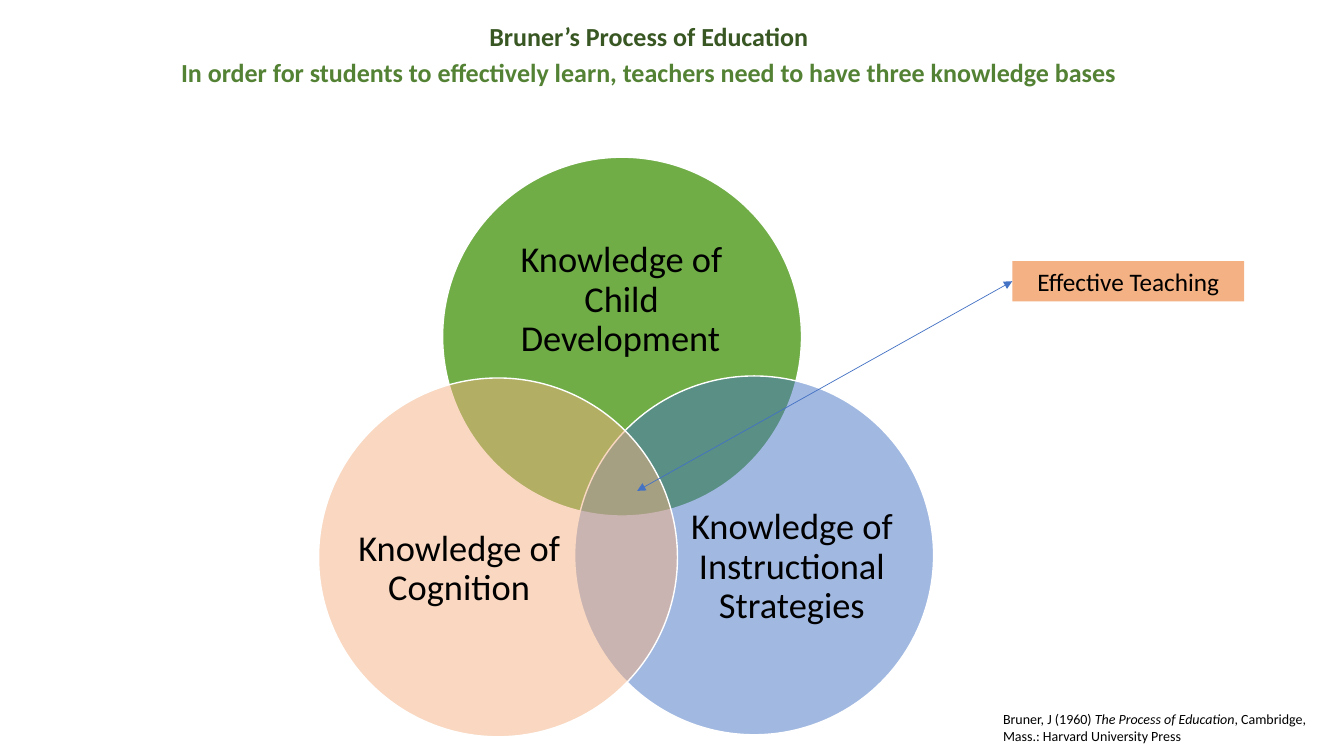
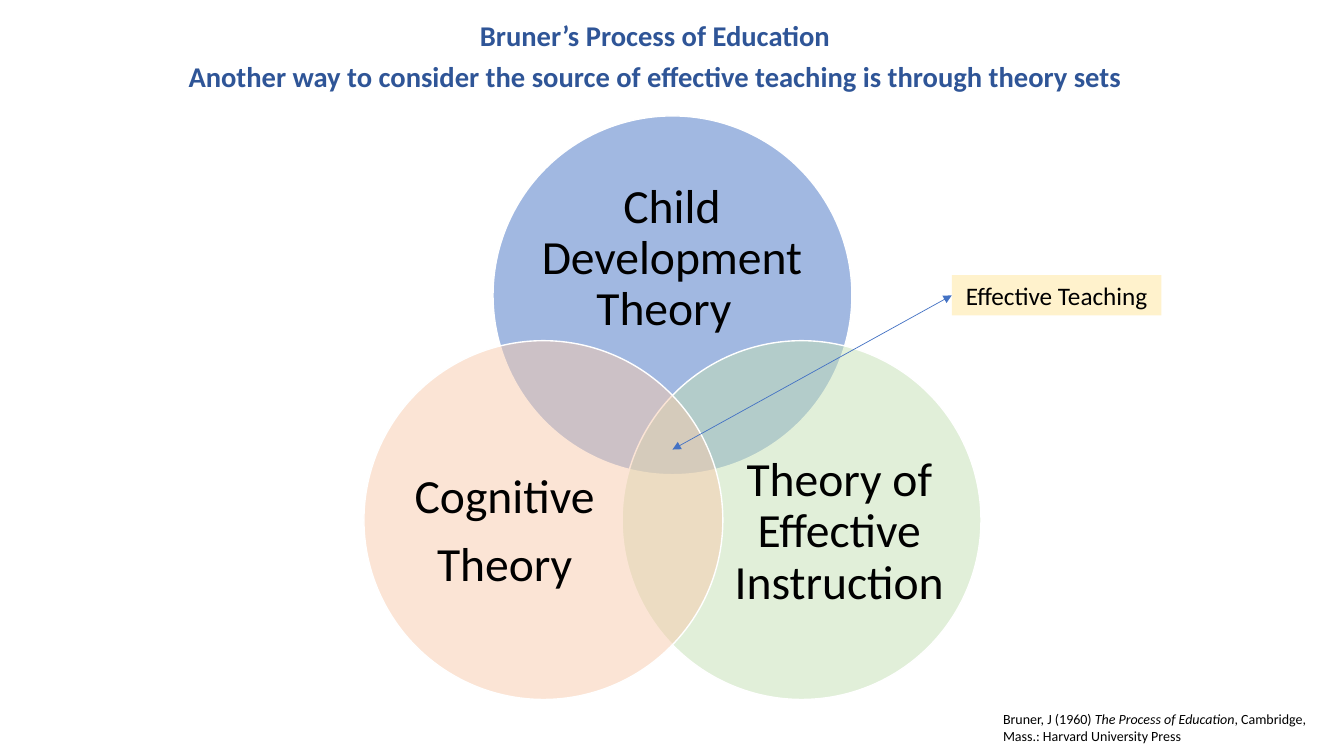
import pptx
import pptx.util
import pptx.dml.color
import pptx.enum.shapes
import pptx.enum.text
import pptx.oxml
import pptx.oxml.ns
import lxml.etree

Inches = pptx.util.Inches
Pt = pptx.util.Pt
qn = pptx.oxml.ns.qn
RGBColor = pptx.dml.color.RGBColor
MSO_SHAPE = pptx.enum.shapes.MSO_SHAPE
PP_ALIGN = pptx.enum.text.PP_ALIGN
MSO_ANCHOR = pptx.enum.text.MSO_ANCHOR

THEME = {
    "font": "Calibri",
    "text": "000000",
    "outline": "FFFFFF",
    "arrow": "4472C4",
    "label_size": 18,
    "citation_size": 10,
}

DIAMETER = 3.56
CIRCLE_LABELS = [
    (0.47, 0.62, 2.61, 1.6),
    (1.09, 0.92, 2.13, 1.96),
    (0.33, 0.92, 2.13, 1.96),
]
CITATION = [
    ("Bruner, J (1960) ", False),
    ("The Process of Education", True),
    (", Cambridge, Mass.: Harvard University Press", False),
]

SLIDES = [
    {
        "title_box": (1.54, 0.24, 9.79, 0.92),
        "title_size": 18.6,
        "title_spacing": 0.7,
        "title": [
            ("Bruner’s Process of Education", "385723"),
            ("In order for students to effectively learn, teachers need to have three knowledge bases", "548235"),
        ],
        "circle_size": 26,
        "circles": [
            (4.39, 1.56, "70AD47", 100, ["Knowledge of Child Development\t"]),
            (5.7, 3.73, "4472C4", 50, ["Knowledge of Instructional Strategies"]),
            (3.16, 3.75, "F4B183", 50, ["Knowledge of Cognition"]),
        ],
        "arrow_start": (6.32, 4.87),
        "label_box": (10.04, 2.59, 2.3, 0.4),
        "label_fill": "F4B183",
    },
    {
        "title_box": (1.6, 0.19, 9.79, 0.82),
        "title_size": 20.4,
        "title_spacing": 0.8,
        "title": [
            ("Bruner’s Process of Education", "2F5597"),
            ("Another way to consider the source of effective teaching is through theory sets", "2F5597"),
        ],
        "circle_size": 34,
        "circles": [
            (4.89, 1.15, "4472C4", 50, ["Child Development Theory\t"]),
            (6.17, 3.38, "C5E0B4", 50, ["Theory of Effective Instruction"]),
            (3.61, 3.38, "F8CBAD", 50, ["Cognitive", "Theory"]),
        ],
        "arrow_start": (6.67, 4.46),
        "label_box": (9.44, 2.73, 2.08, 0.4),
        "label_fill": "FFF2CC",
    },
]


def write(shape, paragraphs, size, align=PP_ALIGN.CENTER, spacing=1.0, gap=0, bold=False):
    frame = shape.text_frame
    frame.word_wrap = True
    for index, runs in enumerate(paragraphs):
        paragraph = frame.add_paragraph() if index else frame.paragraphs[0]
        paragraph.alignment = align
        paragraph.line_spacing = spacing
        if index:
            paragraph.space_before = Pt(gap)
        for text, color, italic in runs:
            run = paragraph.add_run()
            run.text = text
            run.font.name = THEME["font"]
            run.font.size = Pt(size)
            run.font.bold = bold
            run.font.italic = italic
            run.font.color.rgb = RGBColor.from_string(color)
    return frame


def add_filled(slide, kind, box, color, opacity=100):
    shape = slide.shapes.add_shape(kind, *map(Inches, box))
    shape.shadow.inherit = False
    shape.fill.solid()
    shape.fill.fore_color.rgb = RGBColor.from_string(color)
    if opacity < 100:
        fill_color = shape.fill._xPr.find(qn("a:solidFill"))[0]
        lxml.etree.SubElement(fill_color, qn("a:alpha"), val=str(opacity * 1000))
    return shape


presentation = pptx.Presentation()
presentation.slide_width = Inches(13.33)
presentation.slide_height = Inches(7.5)

for content in SLIDES:
    slide = presentation.slides.add_slide(presentation.slide_layouts[6])

    title = slide.shapes.add_textbox(*map(Inches, content["title_box"]))
    title_lines = [[(text, color, False)] for text, color in content["title"]]
    write(title, title_lines, content["title_size"],
          spacing=content["title_spacing"], gap=10, bold=True)

    for circle, label_offset in zip(content["circles"], CIRCLE_LABELS):
        left, top, color, opacity, lines = circle
        ellipse = add_filled(slide, MSO_SHAPE.OVAL, (left, top, DIAMETER, DIAMETER), color, opacity)
        ellipse.line.color.rgb = RGBColor.from_string(THEME["outline"])
        ellipse.line.width = Pt(1)

        offset_x, offset_y, width, height = label_offset
        caption = slide.shapes.add_textbox(
            Inches(left + offset_x), Inches(top + offset_y), Inches(width), Inches(height))
        frame = write(caption, [[(line, THEME["text"], False)] for line in lines],
                      content["circle_size"], spacing=0.9, gap=12)
        frame.vertical_anchor = MSO_ANCHOR.MIDDLE
        frame.margin_left = frame.margin_right = frame.margin_top = frame.margin_bottom = 0

    label = add_filled(slide, MSO_SHAPE.RECTANGLE, content["label_box"], content["label_fill"])
    label.line.fill.background()
    write(label, [[("Effective Teaching", THEME["text"], False)]], THEME["label_size"])

    start_x, start_y = map(Inches, content["arrow_start"])
    arrow = slide.shapes.add_connector(
        pptx.enum.shapes.MSO_CONNECTOR.STRAIGHT, start_x, start_y, label.left, label.top)
    arrow.end_connect(label, 1)
    arrow.line.color.rgb = RGBColor.from_string(THEME["arrow"])
    arrow.line.width = Pt(0.5)
    line_element = arrow.line._get_or_add_ln()
    for end in ("a:headEnd", "a:tailEnd"):
        lxml.etree.SubElement(line_element, qn(end), type="triangle")
    lxml.etree.SubElement(arrow._element.spPr, qn("a:effectLst"))

    citation = slide.shapes.add_textbox(Inches(9.85), Inches(7), Inches(3.27), Inches(0.44))
    write(citation, [[(text, THEME["text"], italic) for text, italic in CITATION]],
          THEME["citation_size"], align=PP_ALIGN.LEFT)

presentation.save("out.pptx")
